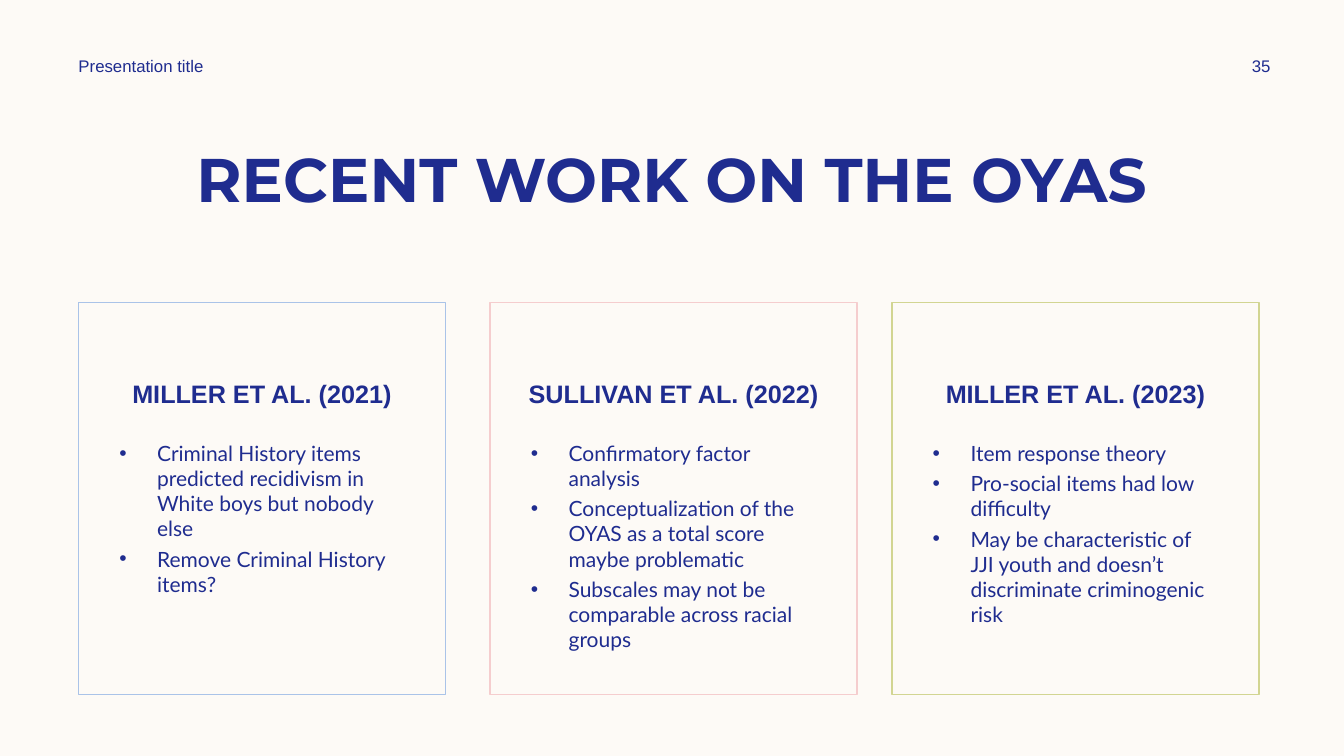
import pptx
import pptx.util
import pptx.dml.color
import pptx.enum.shapes
import pptx.enum.text
import lxml.etree

Pt = pptx.util.Pt
RGBColor = pptx.dml.color.RGBColor
ALIGN = pptx.enum.text.PP_ALIGN
ANCHOR = pptx.enum.text.MSO_ANCHOR

CREAM = RGBColor(0xFD, 0xFA, 0xF6)
NAVY = RGBColor(0x1F, 0x2C, 0x8F)
BLUE = RGBColor(0xAA, 0xC3, 0xE8)
PINK = RGBColor(0xF5, 0xCD, 0xCE)
GREEN = RGBColor(0xD2, 0xD5, 0x92)

# Card left edge, border colour, heading, findings
STUDIES = [
    (56.16, BLUE, "MILLER ET AL. (2021)", [
        "Criminal History items predicted recidivism in White boys but nobody else",
        "Remove Criminal History items?",
    ]),
    (350.1, PINK, "SULLIVAN ET AL. (2022)", [
        "Confirmatory factor analysis",
        "Conceptualization of the OYAS as a total score maybe problematic",
        "Subscales may not be comparable across racial groups",
    ]),
    (637.2, GREEN, "MILLER ET AL. (2023)", [
        "Item response theory",
        "Pro-social items had low difficulty",
        "May be characteristic of JJI youth and doesn’t discriminate criminogenic risk",
    ]),
]


def add_run(p, text, size, font, bold=False):
    r = p.add_run()
    r.text = text
    r.font.size = Pt(size)
    r.font.name = font
    r.font.bold = bold
    r.font.color.rgb = NAVY


def add_text_box(s, left, top, width, height, anchor=ANCHOR.TOP):
    box = s.shapes.add_textbox(Pt(left), Pt(top), Pt(width), Pt(height))
    tf = box.text_frame
    tf.word_wrap = True
    tf.vertical_anchor = anchor
    return tf


def add_label(s, left, top, width, height, text, size, font,
              align=ALIGN.CENTER, anchor=ANCHOR.MIDDLE, bold=False):
    p = add_text_box(s, left, top, width, height, anchor).paragraphs[0]
    p.alignment = align
    add_run(p, text, size, font, bold)


def add_bullet(p):
    pPr = p._p.get_or_add_pPr()
    pPr.set("marL", str(Pt(27)))
    pPr.set("indent", str(-Pt(27)))
    ns = pptx.oxml.ns.qn
    lxml.etree.SubElement(pPr, ns("a:buFont")).set("typeface", "Arial")
    lxml.etree.SubElement(pPr, ns("a:buChar")).set("char", "•")


def add_findings(s, left, findings):
    tf = add_text_box(s, left, 311, 218.2, 173.5)
    for i, finding in enumerate(findings):
        p = tf.add_paragraph() if i else tf.paragraphs[0]
        add_bullet(p)
        if i:
            p.space_before = Pt(3.6)
        add_run(p, finding, 15, "Lato")


def add_card(s, left, color, heading):
    sp = s.shapes.add_shape(pptx.enum.shapes.MSO_SHAPE.RECTANGLE,
                            Pt(left), Pt(216), Pt(262.1), Pt(280.1))
    sp.shadow.inherit = False
    sp.fill.background()
    sp.line.color.rgb = color
    sp.line.width = Pt(1)
    tf = sp.text_frame
    tf.word_wrap = True
    tf.vertical_anchor = ANCHOR.TOP
    tf.margin_top = Pt(54)
    p = tf.paragraphs[0]
    p.alignment = ALIGN.CENTER
    add_run(p, heading, 18, "Arial", bold=True)


def main():
    prs = pptx.Presentation()
    prs.slide_width, prs.slide_height = Pt(960), Pt(540)
    s = prs.slides.add_slide(prs.slide_layouts[6])
    s.background.fill.solid()
    s.background.fill.fore_color.rgb = CREAM

    # Header line
    add_label(s, 49, 36, 252, 21.6, "Presentation title", 12, "Arial", ALIGN.LEFT)
    add_label(s, 862, 36, 77.8, 21.6, "35", 12, "Arial")

    # Study cards
    for left, color, heading, findings in STUDIES:
        add_card(s, left, color, heading)
        add_findings(s, left + 22, findings)

    # Title
    add_label(s, 60, 97.2, 840, 60.5, "RECENT WORK ON THE OYAS", 44,
              "Montserrat", anchor=ANCHOR.TOP, bold=True)

    prs.save("out.pptx")


if __name__ == "__main__":
    main()
